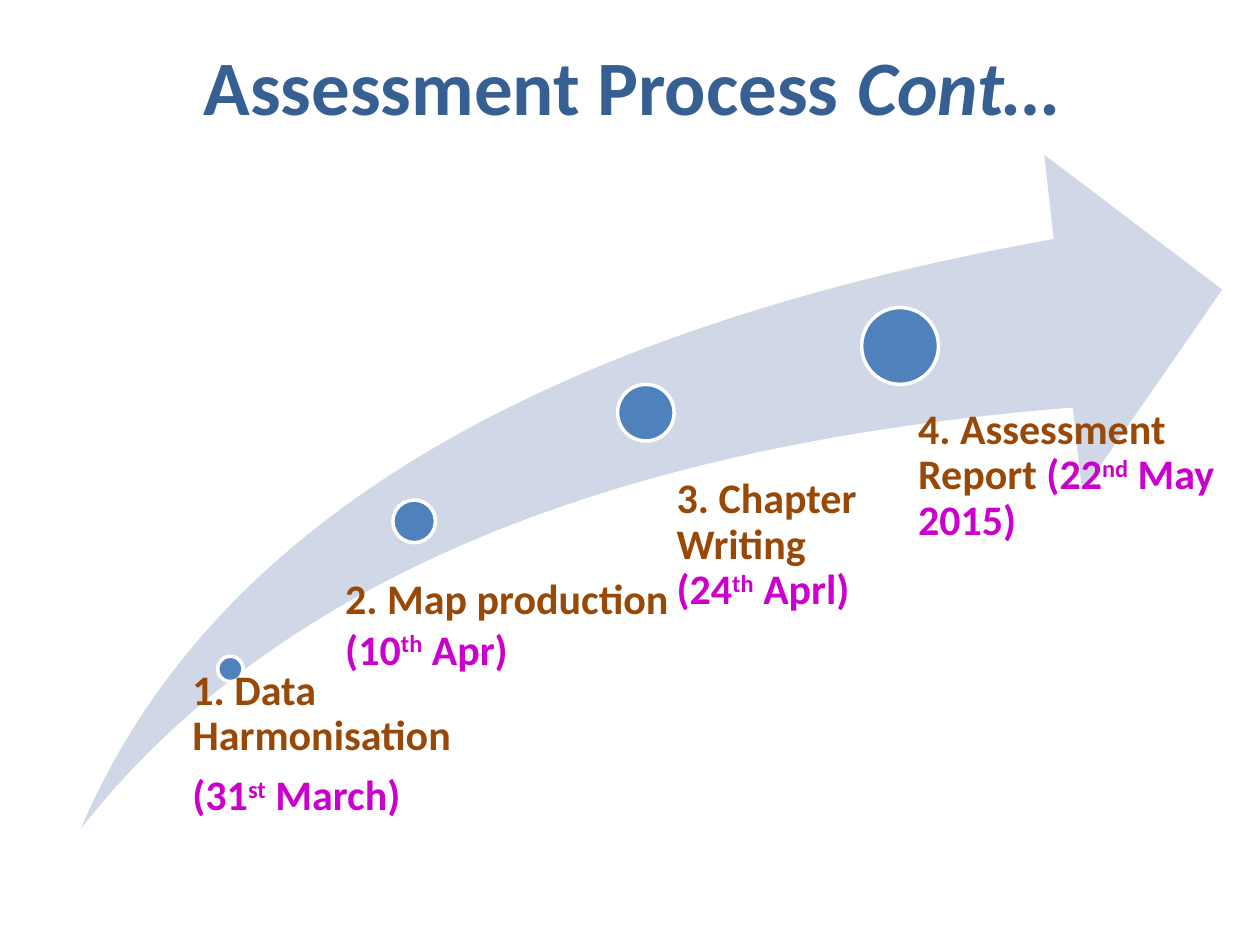
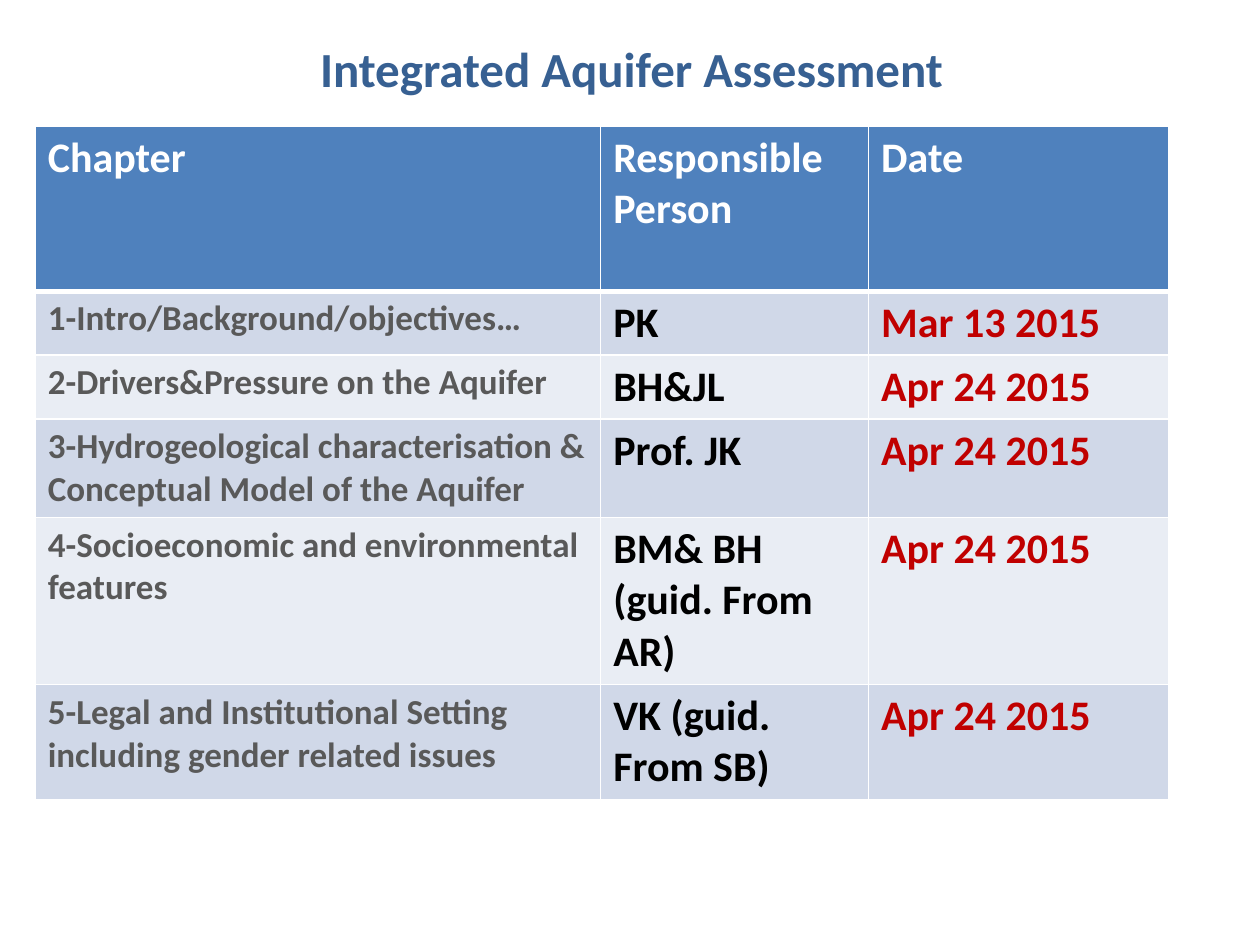
from dataclasses import dataclass

from lxml import etree
from pptx import Presentation
from pptx.dml.color import RGBColor
from pptx.enum import shapes, text
from pptx.oxml import ns
from pptx.util import Cm, Pt

FONT = "Calibri"
COLORS = {
    "title": "376092",
    "blue": "4F81BD",
    "band": "D0D8E8",
    "light": "E9EDF4",
    "white": "FFFFFF",
    "step": "984807",
    "date": "CC00CC",
    "chapter": "595959",
    "person": "000000",
    "deadline": "C00000",
}


@dataclass(frozen=True)
class Run:
    text: str
    color: str
    italic: bool = False
    raised: bool = False


@dataclass(frozen=True)
class Step:
    dot_left: float
    dot_top: float
    dot_size: float
    label_left: float
    label_top: float
    label_width: float
    label_height: float
    paragraphs: tuple[tuple[Run, ...], ...]
    line_spacing: float = 0.9
    space_after: float = 8.4


@dataclass(frozen=True)
class Chapter:
    name: str
    person: str
    deadline: str
    height: float


def dated(day: str, suffix: str, month: str) -> tuple[Run, ...]:
    return (Run(f"({day}", "date"), Run(suffix, "date", raised=True),
            Run(f" {month})", "date"))


STEPS = (
    Step(4.39, 13.23, 0.51, 3.88, 13.49, 5.51, 3.2,
         ((Run("1. Data Harmonisation", "step"),), dated("31", "st", "March"))),
    Step(7.92, 10.08, 0.86, 6.96, 11.55, 6.91, 2.1,
         ((Run("2. Map production", "step"),), dated("10", "th", "Apr")),
         line_spacing=1.0, space_after=0),
    Step(12.45, 7.75, 1.14, 13.64, 9.63, 3.96, 2.8,
         ((Run("3. Chapter Writing ", "step"), *dated("24", "th", "Aprl")),)),
    Step(17.37, 6.2, 1.55, 18.51, 8.23, 6.0, 2.8,
         ((Run("4. Assessment Report ", "step"), *dated("22", "nd", "May 2015")),)),
)

HEADINGS = ("Chapter", "Responsible Person", "Date")
HEADING_HEIGHT = 3.33
COLUMN_WIDTHS = (11.4, 5.4, 6.06)
CHAPTERS = (
    Chapter("1-Intro/Background/objectives…", "PK", "Mar 13 2015", 1.29),
    Chapter("2-Drivers&Pressure on the Aquifer", "BH&JL", "Apr 24 2015", 1.29),
    Chapter("3-Hydrogeological characterisation & Conceptual Model of the Aquifer",
            "Prof. JK", "Apr 24 2015", 1.98),
    Chapter("4-Socioeconomic and environmental features",
            "BM& BH (guid. From AR)", "Apr 24 2015", 3.37),
    Chapter("5-Legal and Institutional Setting including gender related issues",
            "VK (guid. From SB)", "Apr 24 2015", 2.32),
)


def rgb(name: str) -> RGBColor:
    return RGBColor.from_string(COLORS[name])


def style_font(font, size: float, color: str) -> None:
    font.name = FONT
    font.size = Pt(size)
    font.bold = True
    font.color.rgb = rgb(color)


def add_runs(p, runs: tuple[Run, ...], size: float) -> None:
    for run in runs:
        r = p.add_run()
        r.text = run.text
        style_font(r.font, size, run.color)
        if run.italic:
            r.font.italic = True
        if run.raised:
            r._r.get_or_add_rPr().set("baseline", "30000")


def add_text_box(s, left: float, top: float, width: float, height: float):
    tf = s.shapes.add_textbox(Cm(left), Cm(top), Cm(width), Cm(height)).text_frame
    tf.word_wrap = True
    tf.margin_left = tf.margin_right = tf.margin_top = tf.margin_bottom = 0
    return tf


def add_title(s, top: float, height: float, size: float, *runs: Run) -> None:
    tf = add_text_box(s, 1.3, top, 22.86, height)
    tf.vertical_anchor = text.MSO_ANCHOR.MIDDLE
    p = tf.paragraphs[0]
    p.alignment = text.PP_ALIGN.CENTER
    add_runs(p, runs, size)


def add_filled_shape(s, kind, left: float, top: float, width: float, height: float,
                     color: str):
    sp = s.shapes.add_shape(kind, Cm(left), Cm(top), Cm(width), Cm(height))
    sp.shadow.inherit = False
    sp.fill.solid()
    sp.fill.fore_color.rgb = rgb(color)
    sp.line.fill.background()
    return sp


def add_step(s, step: Step) -> None:
    dot = add_filled_shape(s, shapes.MSO_SHAPE.OVAL, step.dot_left, step.dot_top,
                           step.dot_size, step.dot_size, "blue")
    dot.line.color.rgb = rgb("white")
    dot.line.width = Pt(2)
    tf = add_text_box(s, step.label_left, step.label_top,
                      step.label_width, step.label_height)
    for i, runs in enumerate(step.paragraphs):
        p = tf.add_paragraph() if i else tf.paragraphs[0]
        p.line_spacing = step.line_spacing
        p.space_after = Pt(step.space_after)
        add_runs(p, runs, 24)


def add_borders(cell, top: float, bottom: float) -> None:
    tc_pr = cell._tc.get_or_add_tcPr()
    for side, width in (("L", 1), ("R", 1), ("T", top), ("B", bottom)):
        ln = etree.SubElement(tc_pr, ns.qn(f"a:ln{side}"), w=str(Pt(width)))
        fill = etree.SubElement(ln, ns.qn("a:solidFill"))
        etree.SubElement(fill, ns.qn("a:srgbClr"), val=COLORS["white"])


def fill_row(table, row: int, values: tuple[str, ...], colors: tuple[str, ...],
             sizes: tuple[float, ...], background: str) -> None:
    for column, (value, color, size) in enumerate(zip(values, colors, sizes)):
        cell = table.cell(row, column)
        add_borders(cell, 3 if row == 1 else 1, 3 if row == 0 else 1)
        cell.fill.solid()
        cell.fill.fore_color.rgb = rgb(background)
        cell.text_frame.text = value
        style_font(cell.text_frame.paragraphs[0].runs[0].font, size, color)


def build_process(prs) -> None:
    s = prs.slides.add_slide(prs.slide_layouts[6])
    add_title(s, 0.33, 2.77, 44, Run("Assessment Process ", "title"),
              Run("Cont…", "title", italic=True))
    arrow = add_filled_shape(s, shapes.MSO_SHAPE.SWOOSH_ARROW,
                             1.63, 3.12, 23.01, 13.59, "band")
    arrow.adjustments[0] = arrow.adjustments[1] = 0.25
    for step in STEPS:
        add_step(s, step)


def build_schedule(prs) -> None:
    s = prs.slides.add_slide(prs.slide_layouts[6])
    add_title(s, 0.56, 1.6, 28, Run("Integrated Aquifer Assessment", "title"))
    heights = (HEADING_HEIGHT, *(chapter.height for chapter in CHAPTERS))
    table = s.shapes.add_table(len(heights), len(COLUMN_WIDTHS), Cm(0.71), Cm(2.54),
                               Cm(sum(COLUMN_WIDTHS)), Cm(sum(heights))).table
    for column, width in zip(table.columns, COLUMN_WIDTHS):
        column.width = Cm(width)
    for row, height in zip(table.rows, heights):
        row.height = Cm(height)
    fill_row(table, 0, HEADINGS, ("white",) * 3, (24,) * 3, "blue")
    for i, chapter in enumerate(CHAPTERS, 1):
        fill_row(table, i, (chapter.name, chapter.person, chapter.deadline),
                 ("chapter", "person", "deadline"), (20, 24, 24),
                 "band" if i % 2 else "light")


def main() -> None:
    prs = Presentation()
    prs.slide_width, prs.slide_height = Cm(25.4), Cm(19.05)
    build_process(prs)
    build_schedule(prs)
    prs.save("out.pptx")


if __name__ == "__main__":
    main()
